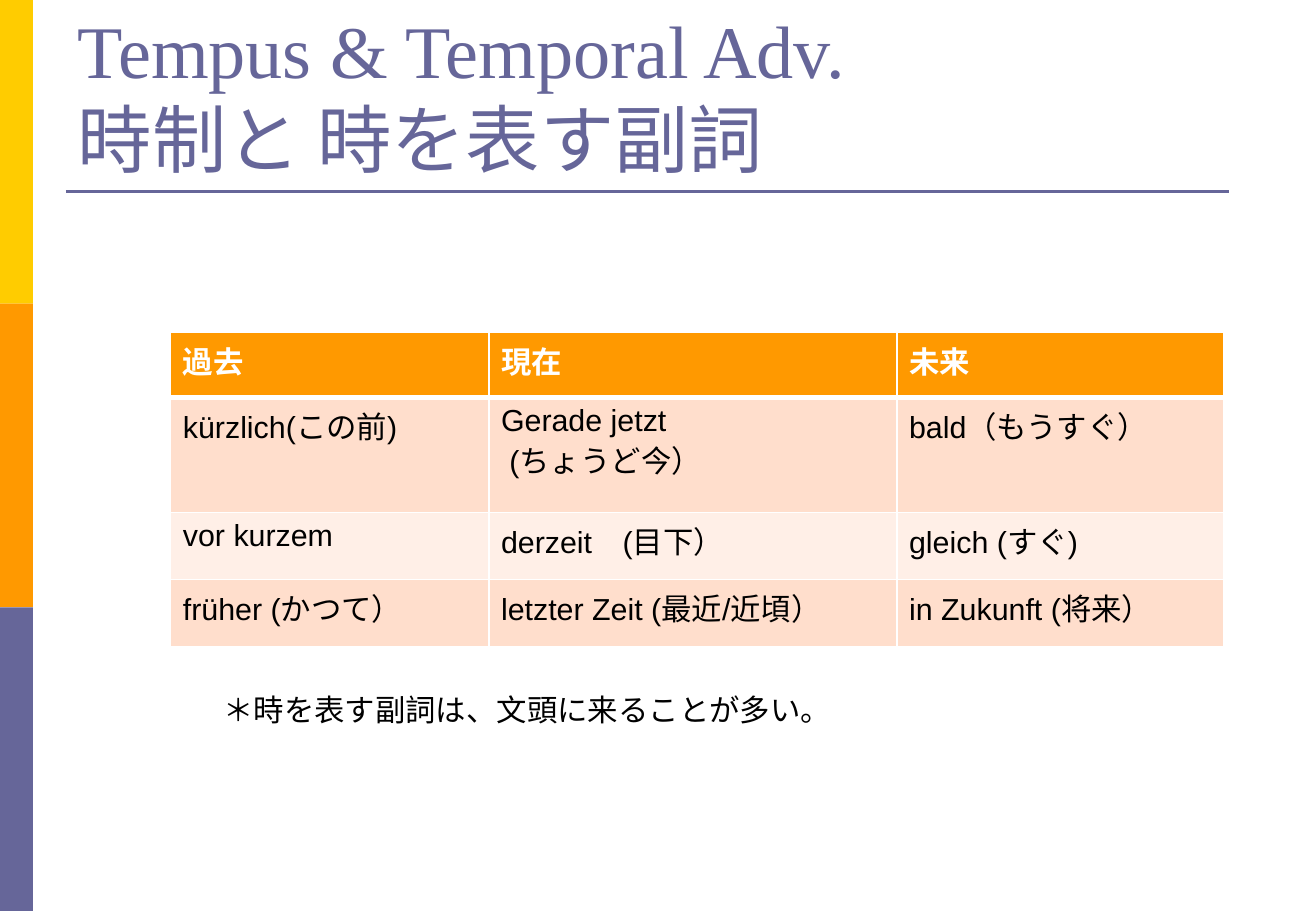
import dataclasses

import lxml.etree
import pptx
import pptx.dml.color
import pptx.enum.shapes
import pptx.enum.text
import pptx.oxml.ns
import pptx.util

Cm = pptx.util.Cm
Pt = pptx.util.Pt


@dataclasses.dataclass(frozen=True)
class Theme:
    yellow: str = "FFCC00"
    orange: str = "FF9900"
    violet: str = "666699"
    peach: str = "FFDECC"
    pale_peach: str = "FFEFE7"
    white: str = "FFFFFF"
    black: str = "000000"
    title_font: str = "Times New Roman"
    body_font: str = "Arial"
    title_size: int = 44
    body_size: int = 18
    rule_width: float = 1.5
    grid_width: int = 1
    header_rule_width: int = 3


THEME = Theme()

ADVERBS = [
    ["過去", "現在", "未来"],
    ["kürzlich(この前)", "Gerade jetzt\n (ちょうど今）", "bald（もうすぐ）"],
    ["vor kurzem", "derzeit　(目下）", "gleich (すぐ)"],
    ["früher (かつて）", "letzter Zeit (最近/近頃）", "in Zukunft (将来）"],
]


def rgb(color):
    return pptx.dml.color.RGBColor.from_string(color)


def write_text(frame, text, *, font=THEME.body_font, size=THEME.body_size,
               color=THEME.black, bold=False):
    """Fill a text frame: newline starts a paragraph, \\v breaks a line."""
    frame.text = text
    for paragraph in frame.paragraphs:
        for run in paragraph.runs:
            run.font.name = font
            run.font.size = Pt(size)
            run.font.bold = bold
            run.font.color.rgb = rgb(color)


def add_text_box(slide, box, text, anchor, **text_format):
    frame = slide.shapes.add_textbox(*box).text_frame
    frame.word_wrap = True
    frame.vertical_anchor = anchor
    write_text(frame, text, **text_format)


def add_side_bands(slide, box):
    left, top, width, height = box
    colors = [THEME.yellow, THEME.orange, THEME.violet]
    band_height = height // len(colors)
    for index, color in enumerate(colors):
        band = slide.shapes.add_shape(
            pptx.enum.shapes.MSO_SHAPE.RECTANGLE,
            left, top + index * band_height, width, band_height)
        band.shadow.inherit = False
        band.fill.solid()
        band.fill.fore_color.rgb = rgb(color)
        band.line.fill.background()


def add_heading(slide, box):
    left, top, width, height = box
    add_text_box(slide, box, "Tempus & Temporal Adv.\v時制と 時を表す副詞",
                 pptx.enum.text.MSO_ANCHOR.BOTTOM, font=THEME.title_font,
                 size=THEME.title_size, color=THEME.violet)

    # Rule just below the title
    rule_top = top + height + Cm(0.08)
    rule = slide.shapes.add_connector(
        pptx.enum.shapes.MSO_CONNECTOR.STRAIGHT,
        left, rule_top, left + width - Cm(0.46), rule_top)
    rule.line.color.rgb = rgb(THEME.violet)
    rule.line.width = Pt(THEME.rule_width)
    lxml.etree.SubElement(rule.line._get_or_add_ln().getparent(),
                          pptx.oxml.ns.qn("a:effectLst"))


def set_borders(cell, **widths):
    """Draw white borders; widths are in points, keyed by side L, R, T, B."""
    properties = cell._tc.get_or_add_tcPr()
    for side, width in widths.items():
        border = lxml.etree.SubElement(
            properties, pptx.oxml.ns.qn(f"a:ln{side}"), w=str(Pt(width)))
        fill = lxml.etree.SubElement(border, pptx.oxml.ns.qn("a:solidFill"))
        lxml.etree.SubElement(fill, pptx.oxml.ns.qn("a:srgbClr"), val=THEME.white)


def add_adverb_table(slide, box):
    adverbs = slide.shapes.add_table(len(ADVERBS), len(ADVERBS[0]), *box).table
    for column, width in zip(adverbs.columns, [6.65, 8.53, 6.83]):
        column.width = Cm(width)
    for row, height in zip(adverbs.rows, [1.37, 2.41, 1.4, 1.4]):
        row.height = Cm(height)

    thin, thick = THEME.grid_width, THEME.header_rule_width
    row_fills = [THEME.orange, THEME.peach, THEME.pale_peach, THEME.peach]
    for row_index, (texts, row_fill) in enumerate(zip(ADVERBS, row_fills)):
        is_header = row_index == 0
        for column_index, text in enumerate(texts):
            cell = adverbs.cell(row_index, column_index)
            write_text(cell.text_frame, text, bold=is_header,
                       color=THEME.white if is_header else THEME.black)
            set_borders(cell, L=thin, R=thin,
                        T=thick if row_index == 1 else thin,
                        B=thick if is_header else thin)
            cell.fill.solid()
            cell.fill.fore_color.rgb = rgb(row_fill)


def add_note(slide, box):
    add_text_box(slide, box, "＊時を表す副詞は、文頭に来ることが多い。",
                 pptx.enum.text.MSO_ANCHOR.TOP)


def main():
    deck = pptx.Presentation()
    deck.slide_width, deck.slide_height = Cm(27.51), Cm(19.05)
    slide = deck.slides.add_slide(deck.slide_layouts[6])

    add_side_bands(slide, (0, 0, Cm(0.69), deck.slide_height))
    add_heading(slide, (Cm(1.38), Cm(0.76), Cm(24.77), Cm(3.17)))
    add_adverb_table(slide, (Cm(3.57), Cm(6.94), Cm(22.01), Cm(6.58)))
    add_note(slide, (Cm(4.42), Cm(14.33), Cm(16.13), Cm(1.02)))

    deck.save("out.pptx")


if __name__ == "__main__":
    main()
